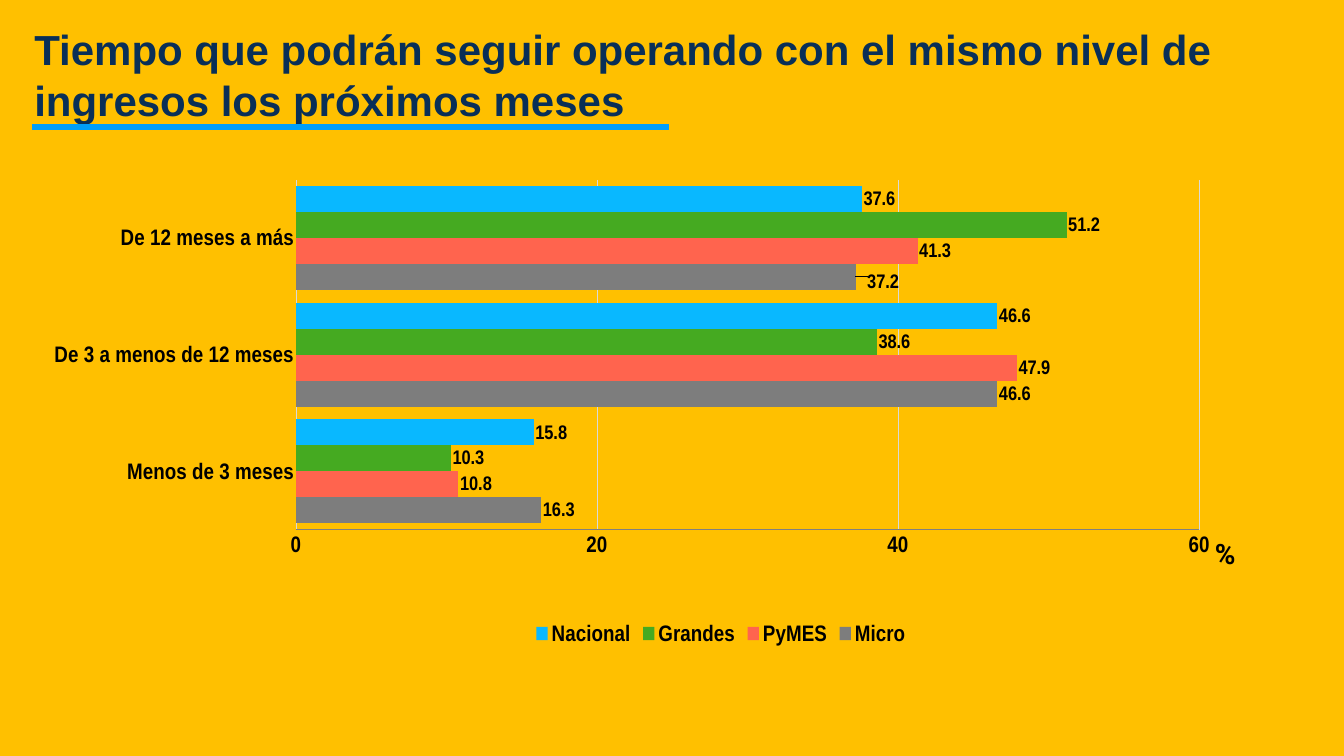
from lxml import etree
from pptx import Presentation
from pptx import util as u
from pptx.chart.data import CategoryChartData
from pptx.dml.color import RGBColor
from pptx.enum import chart as ch, shapes, text
from pptx.oxml import parse_xml
from pptx.oxml.ns import nsdecls, qn

Pt = u.Pt
MONTHS = ["Menos de 3 meses", "De 3 a menos de 12 meses", "De 12 meses a más"]
COMPANIES = [
    ("Micro", "7D7D7D", (16.3, 46.6, 37.2)),
    ("PyMES", "FF644E", (10.8, 47.9, 41.3)),
    ("Grandes", "45AA21", (10.3, 38.6, 51.2)),
    ("Nacional", "09B8FF", (15.8, 46.6, 37.6)),
]


def rgb(code):
    return RGBColor.from_string(code)


def apply(target, **values):
    for name, value in values.items():
        setattr(target, name, value)


class Deck:
    INK, NAVY, ACCENT = "000000", "092F57", "009EF9"
    GRID, AXIS, BACK = "D9D9D9", "808080", "FFC000"

    def __init__(self):
        self.prs = Presentation()
        apply(self.prs, slide_width=Pt(1920), slide_height=Pt(1080))
        self.slide = self.prs.slides.add_slide(self.prs.slide_layouts[6])
        fill = self.slide.background.fill
        fill.solid()
        fill.fore_color.rgb = rgb(self.BACK)

    def font(self, font, size, color=INK, name="Arial"):
        apply(font, size=Pt(size), bold=True, name=name)
        font.color.rgb = rgb(color)

    def stroke(self, line, color, width):
        line.color.rgb = rgb(color)
        line.width = Pt(width)

    def text(self, words, box, size, color, name, inset, frame_format, **para_format):
        frame = self.slide.shapes.add_textbox(*map(Pt, box)).text_frame
        margins = ("margin_left", "margin_top", "margin_right", "margin_bottom")
        apply(frame, **dict.fromkeys(margins, Pt(inset)), **frame_format)
        para = frame.paragraphs[0]
        apply(para, **para_format)
        run = para.add_run()
        run.text = words
        self.font(run.font, size, color, name)

    def rule(self, x1, y1, x2, y2, color, width):
        line = self.slide.shapes.add_connector(
            shapes.MSO_CONNECTOR.STRAIGHT, *map(Pt, (x1, y1, x2, y2)))
        self.stroke(line.line, color, width)
        etree.SubElement(line._element.spPr, qn("a:effectLst"))

    def layout(self, **values):
        items = "".join(f'<c:{k} val="{v}"/>' for k, v in values.items())
        return parse_xml(f'<c:layout {nsdecls("c")}><c:manualLayout>{items}'
                         '</c:manualLayout></c:layout>')

    def axis(self, axis, color, width, **values):
        apply(axis, major_tick_mark=ch.XL_TICK_MARK.NONE,
              minor_tick_mark=ch.XL_TICK_MARK.NONE, **values)
        self.font(axis.tick_labels.font, 32)
        self.stroke(axis.format.line, color, width)

    def bar_chart(self, box, categories, groups):
        data = CategoryChartData(number_format="0.0")
        data.categories = categories
        for name, _, values in groups:
            data.add_series(name, values)
        chart = self.slide.shapes.add_chart(
            ch.XL_CHART_TYPE.BAR_CLUSTERED, *map(Pt, box), data).chart
        apply(chart, has_title=False, has_legend=True)
        self.font(chart.font, 32)
        apply(chart.legend, position=ch.XL_LEGEND_POSITION.BOTTOM, include_in_layout=False)
        self.font(chart.legend.font, 32)

        # Axes and gridlines
        self.axis(chart.category_axis, self.GRID, 0.75)
        value_axis = chart.value_axis
        self.axis(value_axis, self.AXIS, 3, minimum_scale=0, maximum_scale=60,
                  major_unit=20, has_major_gridlines=True)
        apply(value_axis.tick_labels, number_format="0", number_format_is_linked=False)
        self.stroke(value_axis.major_gridlines.format.line, self.GRID, 0.75)

        # Bars and their values
        plot = chart.plots[0]
        apply(plot, gap_width=50, overlap=0, vary_by_categories=False)
        for series, (_, color, _) in zip(plot.series, groups):
            series.format.fill.solid()
            series.format.fill.fore_color.rgb = rgb(color)
            labels = series.data_labels
            apply(labels, show_value=True, number_format="0.0",
                  number_format_is_linked=False,
                  position=ch.XL_LABEL_POSITION.OUTSIDE_END)
            self.font(labels.font, 28)

        # Plot area placement
        area = chart._chartSpace.chart.plotArea
        for old in area.findall(qn("c:layout")):
            area.remove(old)
        area.insert(0, self.layout(layoutTarget="inner", xMode="edge", yMode="edge",
                                   x=0.061, y=0.031, w=0.933, h=0.72))
        return chart

    def nudge_label(self, point, x, y):
        label = point.data_label
        self.font(label.font, 28)
        label.position = ch.XL_LABEL_POSITION.OUTSIDE_END
        label._dLbl.insert(1, self.layout(x=x, y=y))


def main():
    deck = Deck()

    # Title
    deck.text("Tiempo que podrán seguir operando con el mismo nivel de "
              "ingresos los próximos meses",
              (45.4, 28.8, 1736.6, 152.6), 60, deck.NAVY, "Arial", 3.6,
              dict(word_wrap=True, vertical_anchor=text.MSO_ANCHOR.BOTTOM),
              line_spacing=Pt(72))

    # Unit of the value axis
    deck.text("%", (1728, 761.8, 44.6, 56.9), 40, deck.INK, "Roboto", 4.3,
              dict(word_wrap=False, vertical_anchor=text.MSO_ANCHOR.MIDDLE,
                   auto_size=text.MSO_AUTO_SIZE.SHAPE_TO_FIT_TEXT),
              alignment=text.PP_ALIGN.CENTER)

    # Chart by company size
    chart = deck.bar_chart((77.8, 235.4, 1650.2, 694.1), MONTHS, COMPANIES)
    deck.nudge_label(chart.plots[0].series[0].points[2], 0.01, 0.01)

    # Title underline
    deck.rule(45.4, 181.4, 956.2, 181.4, deck.ACCENT, 9)

    deck.prs.save("out.pptx")


if __name__ == "__main__":
    main()
